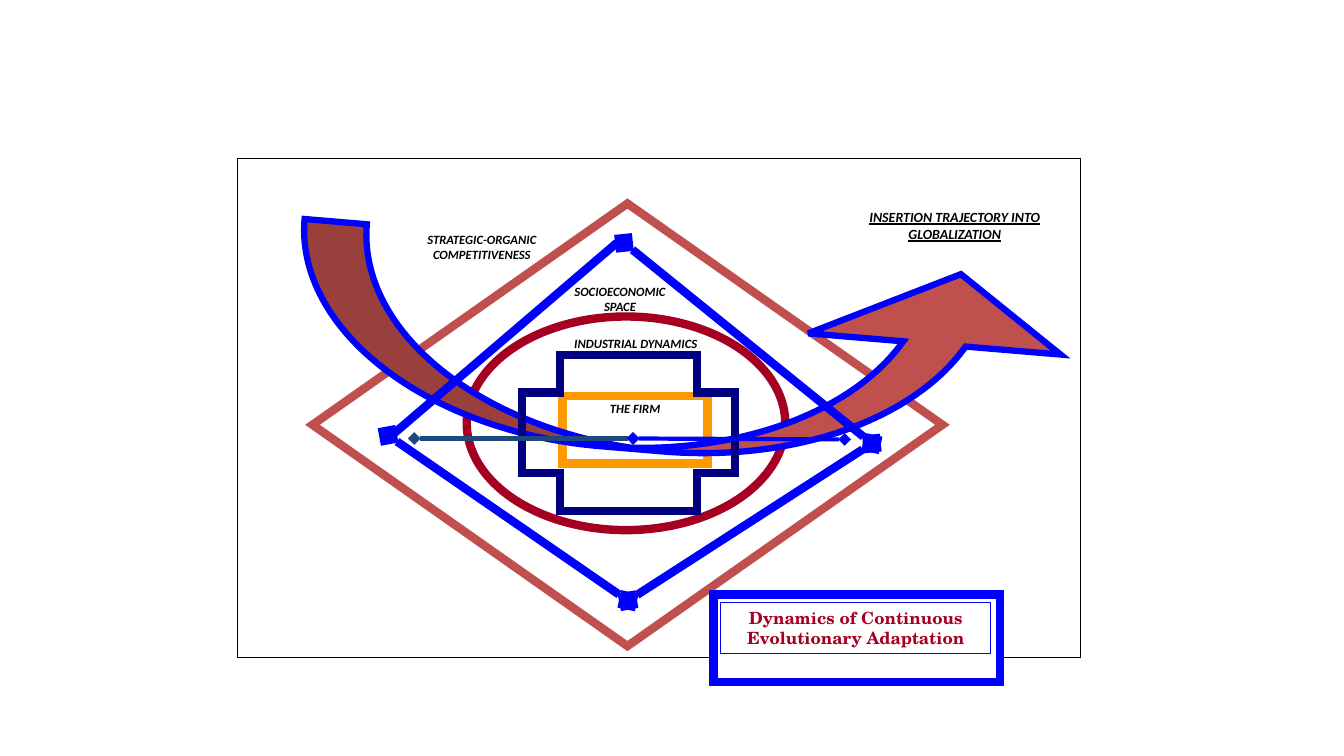
from lxml import etree
from pptx import Presentation
from pptx.dml.color import RGBColor
from pptx.enum import shapes, text
from pptx.oxml.ns import qn
from pptx.util import Pt

WHITE = RGBColor(0xFF, 0xFF, 0xFF)
BLACK = RGBColor(0x00, 0x00, 0x00)
BLUE = RGBColor(0x00, 0x00, 0xFF)
NAVY = RGBColor(0x00, 0x00, 0x80)
STEEL = RGBColor(0x1F, 0x49, 0x7D)
BRICK = RGBColor(0xC0, 0x50, 0x4D)
CRIMSON = RGBColor(0xA5, 0x00, 0x21)
ORANGE = RGBColor(0xFF, 0x99, 0x00)

KIND = shapes.MSO_SHAPE


def set_outline(line, color, width):
    line.color.rgb = color
    line.width = Pt(width)
    etree.SubElement(line._get_or_add_ln(), qn("a:miter"), lim="800000")


def add_outlined(slide, kind, box, color, width, fill=None, adjustments=()):
    shape = slide.shapes.add_shape(kind, *map(Pt, box))
    shape.shadow.inherit = False
    if fill is None:
        shape.fill.background()
    else:
        shape.fill.solid()
        shape.fill.fore_color.rgb = fill
    set_outline(shape.line, color, width)
    for index, value in enumerate(adjustments):
        shape.adjustments[index] = value
    return shape


def write(frame, lines, size, font="Calibri", color=BLACK, italic=True, underline=None):
    frame.word_wrap = True
    frame.vertical_anchor = text.MSO_ANCHOR.TOP
    frame.margin_left = frame.margin_right = Pt(7.2)
    frame.margin_top = frame.margin_bottom = Pt(3.6)
    frame.text = "\n".join(lines)
    for paragraph in frame.paragraphs:
        paragraph.alignment = text.PP_ALIGN.CENTER
        paragraph.space_before = Pt(0)
        paragraph.font.name = font
        paragraph.font.size = Pt(size)
        paragraph.font.bold = True
        paragraph.font.italic = italic
        paragraph.font.underline = underline
        paragraph.font.color.rgb = color


def add_label(slide, box, lines, size=9, underline=None):
    label = slide.shapes.add_textbox(*map(Pt, box))
    write(label.text_frame, lines, size, underline=underline)


def add_link(slide, start, end, color, width, diamonds=True):
    link = slide.shapes.add_connector(
        shapes.MSO_CONNECTOR.STRAIGHT, *map(Pt, start + end))
    link.line.color.rgb = color
    link.line.width = Pt(width)
    if diamonds:
        for tip in ("a:headEnd", "a:tailEnd"):
            etree.SubElement(link.line._get_or_add_ln(), qn(tip), type="diamond")
    etree.SubElement(link._element.spPr, qn("a:effectLst"))


def add_title(slide, box, wording):
    title = slide.shapes.title
    title.left, title.top, title.width, title.height = map(Pt, box)
    title.fill.background()
    set_outline(title.line, BLUE, 0.75)
    write(title.text_frame, [wording], 12, "TeX Gyre Schola", CRIMSON, italic=False)
    title.text_frame.auto_size = text.MSO_AUTO_SIZE.NONE
    # Bring the title in front of its panel
    slide.shapes._spTree.append(title._element)


def main():
    deck = Presentation()
    deck.slide_width, deck.slide_height = Pt(960), Pt(540)
    slide = deck.slides.add_slide(deck.slide_layouts[5])

    # Nested spaces around the firm
    add_outlined(slide, KIND.DIAMOND, (223.2, 145.4, 450, 316.1), BRICK, 6, WHITE)
    firm = add_outlined(slide, KIND.RECTANGLE, (401.8, 283, 103.7, 48.2), ORANGE, 6, WHITE)
    write(firm.text_frame, ["THE FIRM"], 9)
    add_outlined(slide, KIND.OVAL, (333.4, 226.1, 227.5, 152.6), CRIMSON, 6)
    add_label(slide, (400.3, 199.4, 85, 31), ["SOCIOECONOMIC SPACE"])
    add_label(slide, (259.2, 162, 169.9, 32.4), ["STRATEGIC-ORGANIC", "COMPETITIVENESS"])
    add_label(slide, (297.4, 236.2, 313.2, 24.5), ["INDUSTRIAL DYNAMICS"])

    # Trajectory into globalization
    trajectory = add_outlined(slide, KIND.CURVED_RIGHT_ARROW, (419, -28.8, 144, 560.9),
                              BLUE, 4.5, BRICK, (0.31, 1.256, 0.356))
    trajectory.rotation = 274.8
    add_label(slide, (610.6, 145.4, 142.6, 106.6),
              ["INSERTION TRAJECTORY INTO GLOBALIZATION"], 10, underline=True)

    # Frame and industrial cross
    add_outlined(slide, KIND.RECTANGLE, (169.9, 113, 601.9, 356.4), BLACK, 0.75)
    add_outlined(slide, KIND.CROSS, (373, 253.4, 151.9, 111.6), NAVY, 6,
                 adjustments=(0.243,))

    # Competitiveness diamond
    left, bottom, right = (277.2, 311), (448.6, 429.1), (622.8, 316.8)
    add_link(slide, (440.6, 173.5), (277.2, 313.2), BLUE, 6, diamonds=False)
    for start, end in ((left, bottom), (bottom, right), ((445.7, 173.5), right)):
        add_link(slide, start, end, BLUE, 6)

    # Horizontal axis through the firm
    center = (452.2, 313.2)
    add_link(slide, (295.9, 313.2), center, STEEL, 3)
    add_link(slide, center, (603.4, 313.9), BLUE, 3)

    # Title panel
    add_outlined(slide, KIND.RECTANGLE, (509.8, 424.8, 204.5, 62.6), BLUE, 6, WHITE)
    add_title(slide, (514.8, 430.6, 193, 36),
              "Dynamics of Continuous Evolutionary Adaptation")

    deck.save("out.pptx")


if __name__ == "__main__":
    main()
